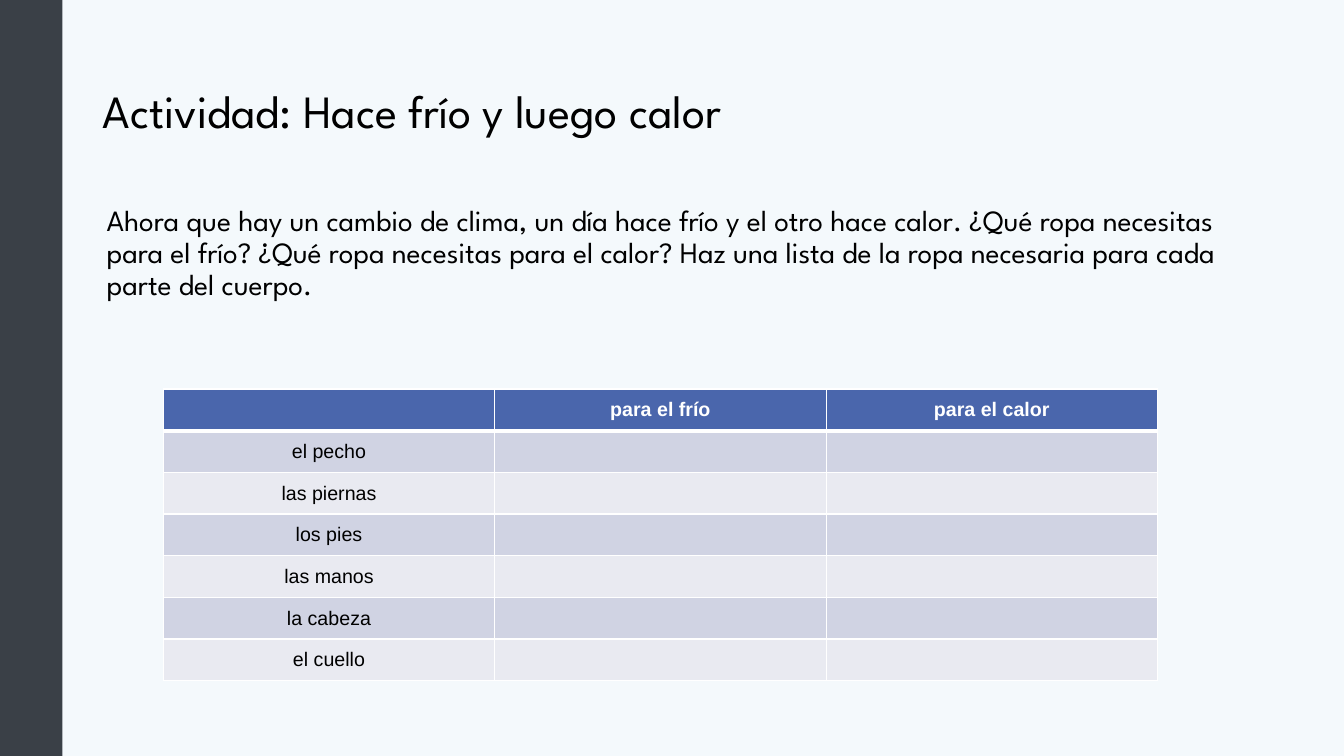
from dataclasses import dataclass

from lxml import etree
from pptx import Presentation
from pptx.dml.color import RGBColor
from pptx.enum.shapes import MSO_SHAPE
from pptx.enum.text import MSO_ANCHOR, PP_ALIGN
from pptx.oxml.ns import qn
from pptx.util import Inches, Pt

RECTANGLE = MSO_SHAPE.RECTANGLE
TOP, MIDDLE = MSO_ANCHOR.TOP, MSO_ANCHOR.MIDDLE
LEFT, CENTER = PP_ALIGN.LEFT, PP_ALIGN.CENTER


@dataclass(frozen=True)
class Theme:
    """Colours, fonts and type sizes."""
    background: str = "F4F9FC"
    spine: str = "3A4047"
    ink: str = "000000"
    white: str = "FFFFFF"
    header: str = "4A66AC"
    bands: tuple = ("D0D3E3", "E9EAF1")
    display_font: str = "League Spartan"
    table_font: str = "Arial"
    title_size: int = 33
    body_size: int = 21
    table_size: int = 14


def write(tf, text, *, font, size, color, bold=False, align=LEFT, spacing=1.0, before=0):
    """Write one formatted paragraph into a text frame."""
    p = tf.paragraphs[0]
    p.alignment, p.line_spacing, p.space_before = align, spacing, Pt(before)
    r = p.add_run()
    r.text = text
    r.font.name, r.font.size, r.font.bold = font, Pt(size), bold
    r.font.color.rgb = RGBColor.from_string(color)


def paint(fill, color):
    """Apply a solid fill."""
    fill.solid()
    fill.fore_color.rgb = RGBColor.from_string(color)


def border(cell, side, color, width):
    """Draw one border of a table cell."""
    ln = etree.SubElement(cell._tc.get_or_add_tcPr(), qn(f"a:ln{side}"), w=str(Pt(width)))
    solid = etree.SubElement(ln, qn("a:solidFill"))
    etree.SubElement(solid, qn("a:srgbClr"), val=color)


class SlideBuilder:
    """Holds the theme and the current slide."""

    def __init__(self, s, theme):
        """Set the slide and paint its background."""
        self.s, self.theme = s, theme
        paint(s.background.fill, theme.background)

    def rectangle(self, left, top, width, height, color):
        """Add a plain filled rectangle."""
        sp = self.s.shapes.add_shape(
            RECTANGLE, Inches(left), Inches(top), Inches(width), Inches(height))
        sp.shadow.inherit = False
        paint(sp.fill, color)
        sp.line.fill.background()

    def text(self, left, top, width, height, text, anchor=TOP, **style):
        """Add a wrapping text box."""
        sp = self.s.shapes.add_textbox(
            Inches(left), Inches(top), Inches(width), Inches(height))
        tf = sp.text_frame
        tf.word_wrap, tf.vertical_anchor = True, anchor
        write(tf, text, font=self.theme.display_font, color=self.theme.ink,
              spacing=0.9, **style)

    def table(self, left, top, width, row_height, rows):
        """Add a table with a header row and banded rows below it."""
        shape = self.s.shapes.add_table(
            len(rows), len(rows[0]), Inches(left), Inches(top),
            Inches(width), Inches(row_height * len(rows)))
        for i, row in enumerate(rows):
            for j, text in enumerate(row):
                self.cell(shape.table.cell(i, j), text, i)

    def cell(self, cell, text, row):
        """Style and fill one table cell."""
        theme, is_header = self.theme, row == 0
        for side in "LRTB":
            thick = (is_header and side == "B") or (row == 1 and side == "T")
            border(cell, side, theme.white, 3 if thick else 1)
        paint(cell.fill, theme.header if is_header else theme.bands[(row - 1) % 2])
        cell.vertical_anchor = MIDDLE
        if text:
            cell.margin_left = cell.margin_right = Inches(0.12)
            cell.margin_top = cell.margin_bottom = Inches(0.09)
            write(cell.text_frame, text, font=theme.table_font, size=theme.table_size,
                  color=theme.white if is_header else theme.ink,
                  bold=is_header, align=CENTER)


def main():
    """Build and save the clothing activity slide."""
    prs = Presentation()
    prs.slide_width, prs.slide_height = Inches(13.33), Inches(7.5)
    theme = Theme()
    slide = SlideBuilder(prs.slides.add_slide(prs.slide_layouts[6]), theme)

    slide.rectangle(0, 0, 0.62, 7.5, theme.spine)
    slide.text(0.92, 0.4, 11.5, 1.45, "Actividad: Hace frío y luego calor",
               anchor=MIDDLE, size=theme.title_size)
    slide.text(0.96, 2, 11.46, 1.5,
               "Ahora que hay un cambio de clima, un día hace frío y el otro hace calor. "
               "¿Qué ropa necesitas para el frío? ¿Qué ropa necesitas para el calor? "
               "Haz una lista de la ropa necesaria para cada parte del cuerpo.",
               size=theme.body_size, before=7.5)
    body_parts = ("el pecho", "las piernas", "los pies", "las manos",
                  "la cabeza", "el cuello")
    slide.table(1.62, 3.86, 9.86, 0.41,
                [("", "para el frío", "para el calor"),
                 *((part, "", "") for part in body_parts)])
    prs.save("out.pptx")


if __name__ == "__main__":
    main()
